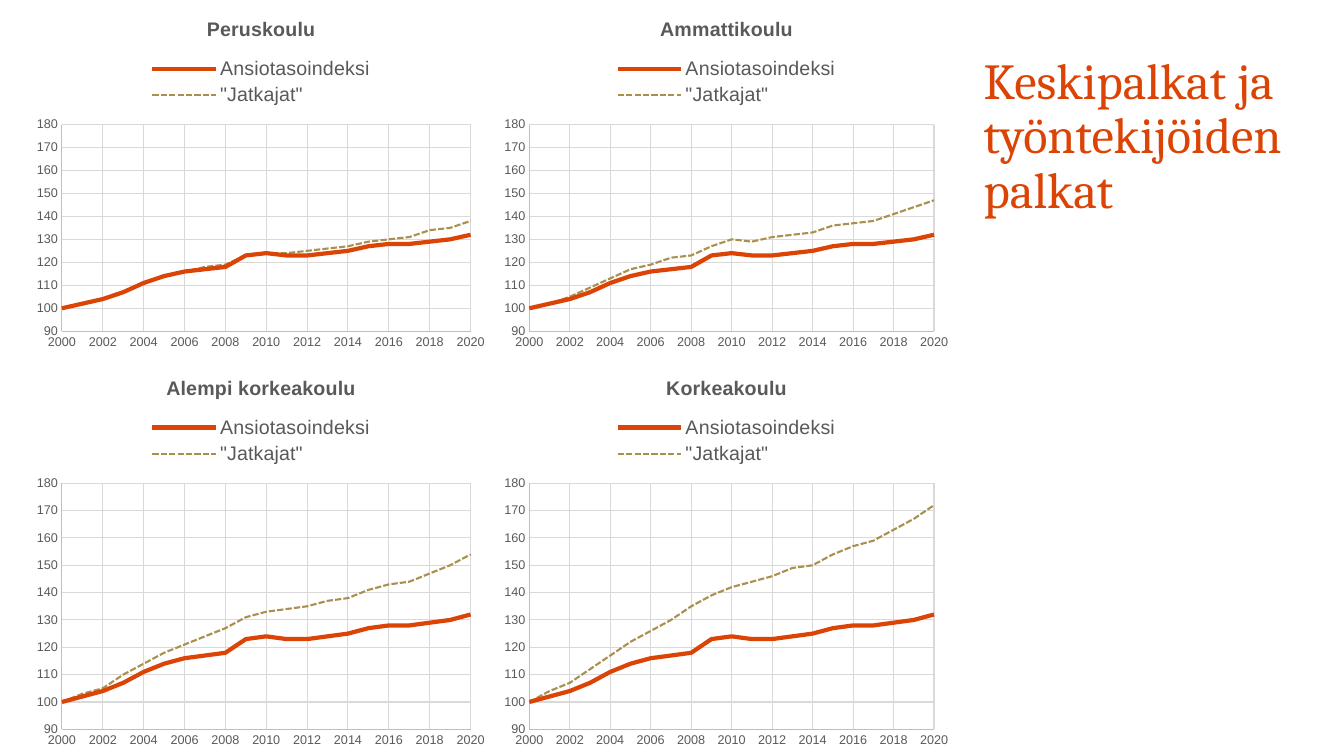
from lxml import etree
from pptx import Presentation
from pptx.chart.data import XyChartData
from pptx.dml.color import RGBColor
from pptx.enum.chart import (XL_AXIS_CROSSES as Crosses, XL_CHART_TYPE as ChartType,
                             XL_LEGEND_POSITION as LegendPos, XL_TICK_MARK as TickMark)
from pptx.enum.dml import MSO_LINE
from pptx.enum.text import MSO_ANCHOR
from pptx.oxml.ns import qn
from pptx.util import Cm, Pt

ORANGE = RGBColor(0xDC, 0x44, 0x05)
OCHRE = RGBColor(0xAA, 0x90, 0x4F)
BLACK = RGBColor(0, 0, 0)
GREY = RGBColor(0x59, 0x59, 0x59)
AXIS_GREY = RGBColor(0xBF, 0xBF, 0xBF)
GRID_GREY = RGBColor(0xD9, 0xD9, 0xD9)

YEARS = range(2000, 2021)
EARNINGS_INDEX = [100, 102, 104, 107, 111, 114, 116, 117, 118, 123, 124,
                  123, 123, 124, 125, 127, 128, 128, 129, 130, 132]
# School level and the index of those who stayed in work, row by row
STAYERS = [
    ("Peruskoulu", [100, 102, 104, 107, 111, 114, 116, 118, 119, 123, 124,
                    124, 125, 126, 127, 129, 130, 131, 134, 135, 138]),
    ("Ammattikoulu", [100, 102, 105, 109, 113, 117, 119, 122, 123, 127, 130,
                      129, 131, 132, 133, 136, 137, 138, 141, 144, 147]),
    ("Alempi korkeakoulu", [100, 103, 105, 110, 114, 118, 121, 124, 127, 131, 133,
                            134, 135, 137, 138, 141, 143, 144, 147, 150, 154]),
    ("Korkeakoulu", [100, 104, 107, 112, 117, 122, 126, 130, 135, 139, 142,
                     144, 146, 149, 150, 154, 157, 159, 163, 167, 172]),
]
COLUMNS = [(Cm(0.69), Cm(11.78)), (Cm(12.47), Cm(11.68))]
ROWS = [(Cm(0), Cm(9.02)), (Cm(9.04), Cm(10.01))]


def set_font(font, size, color, name="Arial", bold=False):
    font.name, font.size, font.bold = name, Pt(size), bold
    font.color.rgb = color


def make_layout(x, y, w, h, inner=False):
    """Manual layout element, lengths as fractions of the chart."""
    layout = etree.Element(qn("c:layout"))
    manual = etree.SubElement(layout, qn("c:manualLayout"))
    entries = [("layoutTarget", "inner")] if inner else []
    entries += [("xMode", "edge"), ("yMode", "edge")]
    entries += [(k, f"{v:.4f}") for k, v in zip("xywh", (x, y, w, h))]
    for tag, value in entries:
        etree.SubElement(manual, qn(f"c:{tag}")).set("val", value)
    return layout


def place_parts(chart, width, height):
    """Fix the plot and the legend at set distances from the chart's edges."""
    plot_area = chart._chartSpace.chart.plotArea
    legend = chart.legend._element
    for parent in (plot_area, legend):
        for old in parent.findall(qn("c:layout")):
            parent.remove(old)
    left, right, top, bottom = Cm(0.87), Cm(0.61), Cm(3.14), Cm(0.67)
    plot_area.insert(0, make_layout(left / width, top / height,
                                    (width - left - right) / width,
                                    (height - top - bottom) / height, inner=True))
    legend_w = Cm(5.9)
    legend.find(qn("c:overlay")).addprevious(
        make_layout((width - legend_w) / 2 / width, Cm(1.35) / height,
                    legend_w / width, Cm(1.42) / height))


def style_axis(axis, low, high, step):
    axis.minimum_scale, axis.maximum_scale, axis.major_unit = low, high, step
    axis.major_tick_mark = axis.minor_tick_mark = TickMark.NONE
    axis.crosses = Crosses.MINIMUM
    axis.has_major_gridlines = True
    for line, color in ((axis.format.line, AXIS_GREY),
                        (axis.major_gridlines.format.line, GRID_GREY)):
        line.color.rgb, line.width = color, Pt(0.75)
    axis.tick_labels.number_format = "0"
    axis.tick_labels.number_format_is_linked = False
    set_font(axis.tick_labels.font, 9, GREY)


def add_wage_chart(s, box, title, stayers):
    data = XyChartData()
    for name, values in (("Ansiotasoindeksi", EARNINGS_INDEX), ('"Jatkajat"', stayers)):
        series = data.add_series(name)
        for year, value in zip(YEARS, values):
            series.add_data_point(year, value)
    chart = s.shapes.add_chart(ChartType.XY_SCATTER_LINES_NO_MARKERS, *box, data).chart
    set_font(chart.font, 10, BLACK)

    chart.has_title = True
    p = chart.chart_title.text_frame.paragraphs[0]
    p.text = title
    set_font(p.runs[0].font, 14, GREY, bold=True)

    chart.has_legend = True
    chart.legend.position = LegendPos.TOP
    chart.legend.include_in_layout = False
    set_font(chart.legend.font, 14, GREY)

    style_axis(chart.category_axis, 2000, 2020, 2)
    style_axis(chart.value_axis, 90, 180, 10)
    index_line, stayers_line = chart.plots[0].series
    for series, color, width in ((index_line, ORANGE, 3), (stayers_line, OCHRE, 1.5)):
        series.smooth = False
        series.format.line.color.rgb = color
        series.format.line.width = Pt(width)
    stayers_line.format.line.dash_style = MSO_LINE.SQUARE_DOT
    place_parts(chart, *box[2:])


def add_heading(s, box):
    tf = s.shapes.add_textbox(*box).text_frame
    tf.word_wrap = True
    tf.vertical_anchor = MSO_ANCHOR.MIDDLE
    p = tf.paragraphs[0]
    p.text = "Keskipalkat ja\vtyöntekijöiden palkat"
    p.line_spacing = 0.9
    for r in p.runs:
        set_font(r.font, 36, ORANGE, "Cambria")


def main():
    prs = Presentation()
    prs.slide_width, prs.slide_height = Cm(33.87), Cm(19.05)
    s = prs.slides.add_slide(prs.slide_layouts[6])
    add_heading(s, (Cm(24.54), Cm(0.08), Cm(9.14), Cm(6.78)))
    for i, (title, stayers) in enumerate(STAYERS):
        (top, height), (left, width) = ROWS[i // 2], COLUMNS[i % 2]
        add_wage_chart(s, (left, top, width, height), title, stayers)
    prs.save("out.pptx")


if __name__ == "__main__":
    main()
